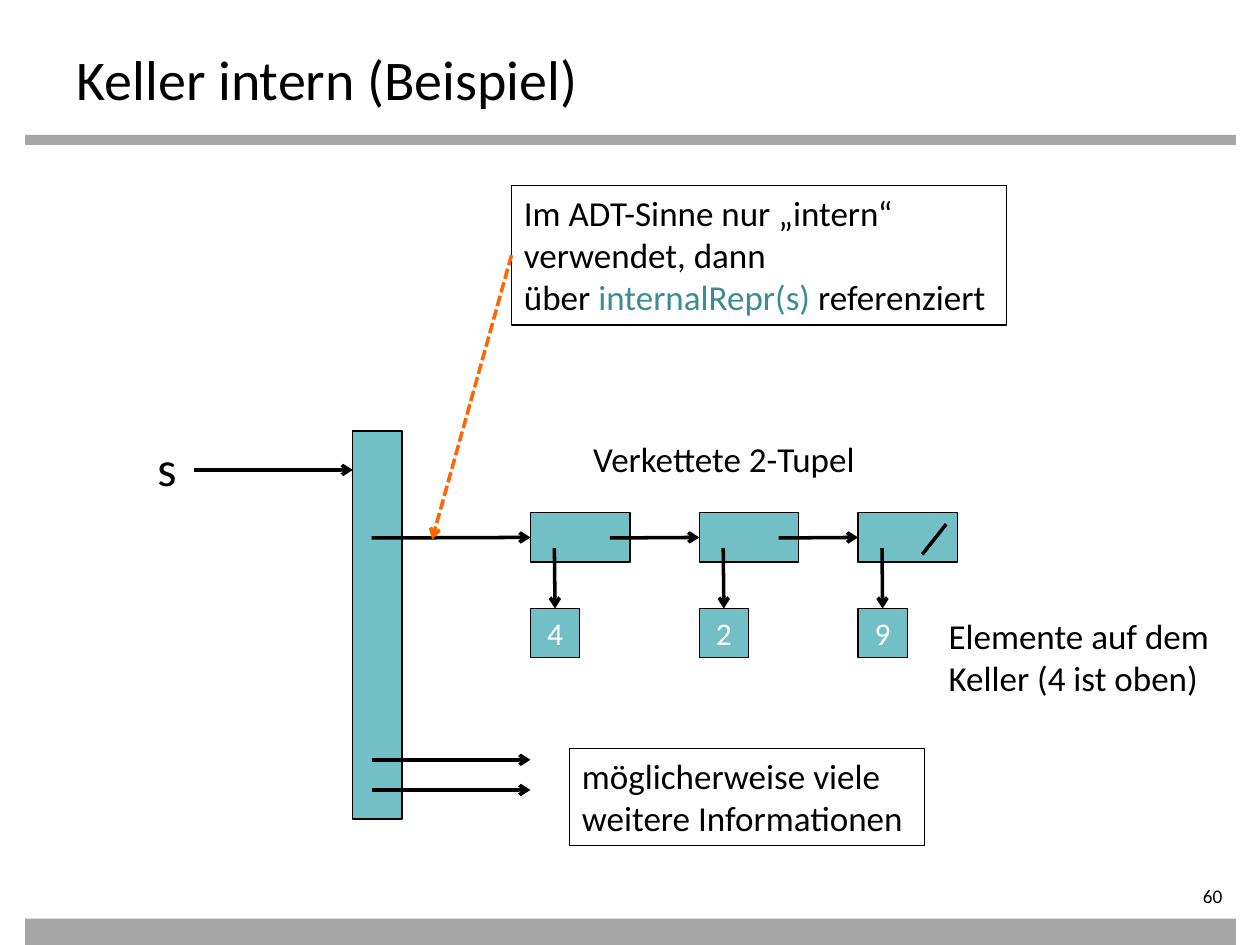
from pptx import Presentation
from pptx.dml.color import RGBColor
from pptx.enum.dml import MSO_LINE
from pptx.enum.shapes import MSO_CONNECTOR, MSO_SHAPE
from pptx.enum.text import MSO_ANCHOR, MSO_AUTO_SIZE, PP_ALIGN
from pptx.oxml.ns import qn
from pptx.util import Inches, Pt
from lxml.etree import SubElement

TOP, LEFT = 0, 1
BLACK, WHITE, GREY = "000000", "FFFFFF", "A6A6A6"
TEAL, DARK_TEAL, ORANGE = "72BFC5", "3C8C93", "FF6600"


def color(value):
    return RGBColor.from_string(value)


class StackSlide:
    font = "Calibri"

    def __init__(self, slide):
        self.slide = slide

    def fill_text(self, shape, paragraphs, size, text_color=BLACK,
                  align=PP_ALIGN.LEFT, **frame_format):
        """Fill a shape; a part is a string, a (string, colour) pair or a line break."""
        frame = shape.text_frame
        for name, value in frame_format.items():
            setattr(frame, name, value)
        for index, parts in enumerate(paragraphs):
            paragraph = frame.add_paragraph() if index else frame.paragraphs[0]
            paragraph.alignment = align
            for part in parts:
                if part == "\n":
                    paragraph.add_line_break()
                    continue
                text, part_color = (part, text_color) if isinstance(part, str) else part
                run = paragraph.add_run()
                run.text = text
                font_format = {"name": self.font, "size": Pt(size)}
                for name, value in font_format.items():
                    setattr(run.font, name, value)
                run.font.color.rgb = color(part_color)

    def rectangle(self, left, top, width, height, fill=TEAL, outline=BLACK):
        shape = self.slide.shapes.add_shape(
            MSO_SHAPE.RECTANGLE, *map(Inches, (left, top, width, height)))
        shape.shadow.inherit = False
        shape.fill.solid()
        shape.fill.fore_color.rgb = color(fill)
        if outline:
            shape.line.color.rgb = color(outline)
            shape.line.width = Pt(0.75)
        else:
            shape.line.fill.background()
        return shape

    def text(self, left, top, width, height, paragraphs, size, **text_format):
        box = self.slide.shapes.add_textbox(*map(Inches, (left, top, width, height)))
        self.fill_text(box, paragraphs, size, **text_format)
        return box

    def label(self, left, top, width, height, paragraphs, size=20, framed=False):
        """Add an unwrapped text that sizes its box, with a thin frame if wanted."""
        box = self.text(left, top, width, height, paragraphs, size,
                        word_wrap=False, auto_size=MSO_AUTO_SIZE.SHAPE_TO_FIT_TEXT)
        if framed:
            box.line.color.rgb = color(BLACK)
            box.line.width = Pt(0.75)
        return box

    def line(self, start, end, line_color=BLACK, dash=None, arrow=True,
             source=None, target=None):
        """Draw a line; source and target are (shape, side) pairs to join."""
        connector = self.slide.shapes.add_connector(
            MSO_CONNECTOR.STRAIGHT, *map(Inches, (*start, *end)))
        connector.line.color.rgb = color(line_color)
        connector.line.width = Pt(2)
        if dash:
            connector.line.dash_style = dash
        properties = connector._element.spPr
        if arrow:
            SubElement(properties.find(qn("a:ln")), qn("a:tailEnd"), type="arrow")
        SubElement(properties, qn("a:effectLst"))
        if source:
            connector.begin_connect(*source)
        if target:
            connector.end_connect(*target)


def main():
    presentation = Presentation()
    presentation.slide_width, presentation.slide_height = Inches(10), Inches(7.5)
    page = StackSlide(presentation.slides.add_slide(presentation.slide_layouts[6]))

    for top, height in ((1.07, 0.08), (7.29, 0.21)):
        page.rectangle(0.2, top, 9.61, height, GREY, outline=None)
    page.text(0.51, 0.28, 9, 0.55, [["Keller intern (Beispiel)"]], 32,
              word_wrap=True, margin_top=Inches(0.07), margin_bottom=0)
    page.text(8.7, 7, 1.1, 0.22, [["60"]], 11, align=PP_ALIGN.RIGHT,
              word_wrap=True, margin_left=0, margin_top=0, margin_bottom=0,
              vertical_anchor=MSO_ANCHOR.MIDDLE)

    page.rectangle(2.8, 3.42, 0.39, 3.08)
    page.label(1.15, 3.42, 0.36, 0.57, [["s"]], size=28)
    page.line((1.54, 3.73), (2.8, 3.73))
    for y in (6.03, 6.27):
        page.line((2.95, y), (4.21, y))

    cell_width, cell_height, element_size = 0.79, 0.39, 0.39
    cell_top, element_top, link_y = 4.07, 4.83, 4.27
    link_start = 2.95
    for left, value in ((4.21, "4"), (5.55, "2"), (6.81, "9")):
        cell = page.rectangle(left, cell_top, cell_width, cell_height)
        element = page.rectangle(left, element_top, element_size, element_size)
        page.fill_text(element, [[value]], 18, WHITE, PP_ALIGN.CENTER,
                       vertical_anchor=MSO_ANCHOR.MIDDLE)
        page.line((link_start, link_y), (left, link_y), target=(cell, LEFT))
        page.line((left + 0.19, 4.35), (left + 0.2, element_top), target=(element, TOP))
        link_start = left + 0.63
    page.line((7.51, 4.16), (7.32, 4.4), arrow=False)

    page.label(4.61, 3.42, 2.37, 0.44, [["Verkettete 2-Tupel"]])
    page.label(7.43, 4.83, 2.33, 0.77,
               [["Elemente auf dem", "\n", "Keller (4 ist oben)"]])
    page.label(4.52, 5.94, 2.82, 0.77,
               [["möglicherweise viele", "\n", "weitere Informationen"]], framed=True)
    note = page.label(4.06, 1.47, 3.93, 1.11, [
        ["Im ADT-Sinne nur „intern“"],
        ["verwendet, dann"],
        ["über ", ("internalRepr(s)", DARK_TEAL), " referenziert"],
    ], framed=True)
    page.line((4.06, 2.02), (3.43, 4.28), ORANGE, MSO_LINE.SQUARE_DOT,
              source=(note, LEFT))

    presentation.save("out.pptx")


if __name__ == "__main__":
    main()
